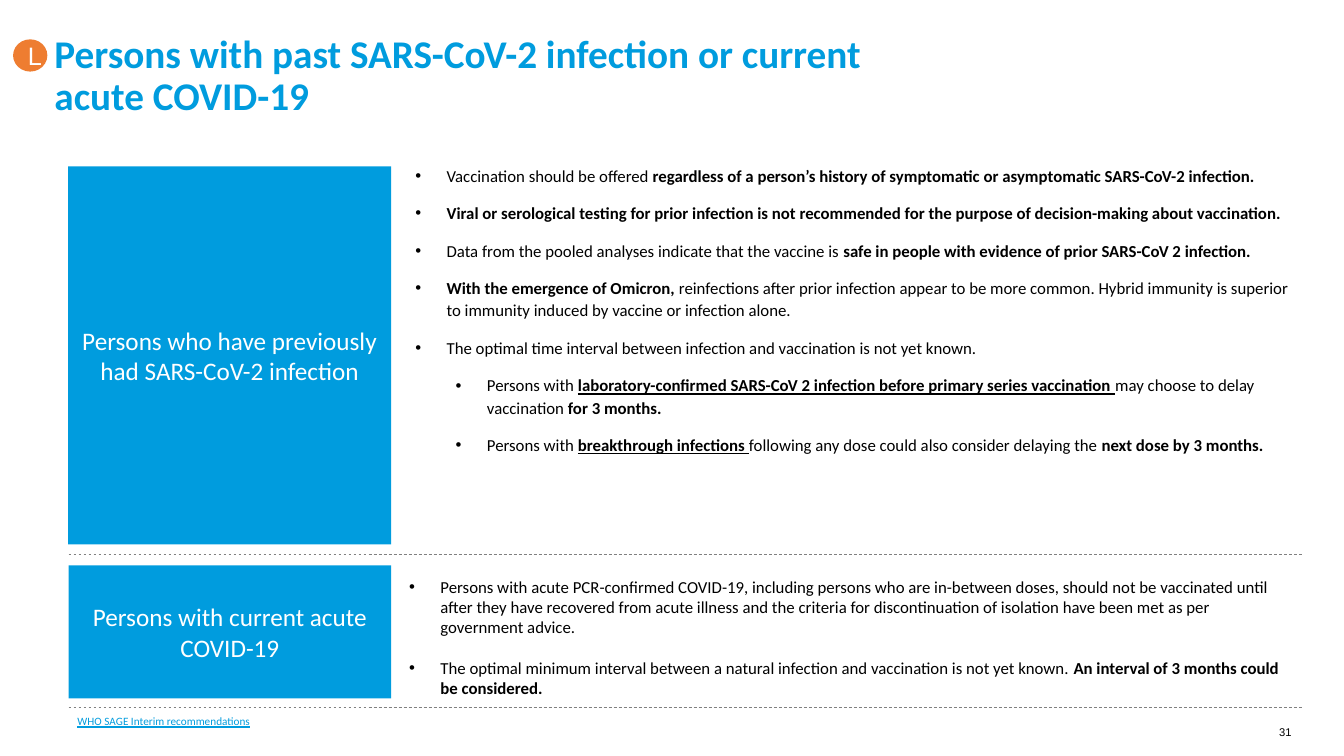
"""Build the slide on vaccinating persons with past or current SARS-CoV-2 infection."""
from dataclasses import dataclass

from lxml import etree
from pptx import Presentation
from pptx import util as u
from pptx.dml.color import RGBColor
from pptx.enum import dml, shapes, text
from pptx.oxml.ns import qn


@dataclass(frozen=True)
class Theme:
    blue: str = "009CDE"
    orange: str = "EE7D31"
    rule: str = "808080"
    ink: str = "000000"
    paper: str = "FFFFFF"
    heading: int = 28
    label: int = 18
    body: int = 12
    small: int = 8
    font: str = "Calibri"
    plain_font: str = "Arial"


theme = Theme()
deck = Presentation()
deck.slide_width, deck.slide_height = u.Inches(13.33), u.Inches(7.5)
COLUMN, ROW = deck.slide_width / 133.3, deck.slide_height / 75
slide = deck.slides.add_slide(deck.slide_layouts[5])


def grid(left, top, width, height):
    return int(left * COLUMN), int(top * ROW), int(width * COLUMN), int(height * ROW)


def write(frame, paragraphs, size, color=theme.ink, font=theme.font, bold=False, underline=False,
          align=text.PP_ALIGN.LEFT, anchor=text.MSO_ANCHOR.TOP, margins=(0.1, 0.05, 0.1, 0.05),
          spacing=1.0, before=0, after=0, bullets=False):
    frame.word_wrap, frame.auto_size = True, text.MSO_AUTO_SIZE.NONE
    frame.vertical_anchor = anchor
    frame.margin_left, frame.margin_top, frame.margin_right, frame.margin_bottom = map(u.Inches, margins)
    for index, (indent, spans) in enumerate(paragraphs):
        paragraph = frame.add_paragraph() if index else frame.paragraphs[0]
        if bullets:
            properties = paragraph._p.get_or_add_pPr()
            properties.set("marL", str(u.Inches(indent)))
            properties.set("indent", str(u.Inches(-0.31)))
            etree.SubElement(properties, qn("a:buFont")).set("typeface", theme.plain_font)
            etree.SubElement(properties, qn("a:buChar")).set("char", "•")
        paragraph.alignment, paragraph.line_spacing = align, spacing
        paragraph.space_before = u.Pt(before if index else 0)
        paragraph.space_after = u.Pt(after)
        for words, style in spans:
            run = paragraph.add_run()
            run.text = words
            run.font.name, run.font.size = font, u.Pt(size)
            run.font.color.rgb = RGBColor.from_string(color)
            run.font.bold = bold or "b" in style
            run.font.underline = underline or "u" in style


past_advice = [
    (0.53, [("Vaccination should be offered ", ""),
            ("regardless of a person’s history of symptomatic or asymptomatic SARS-CoV-2 infection.", "b")]),
    (0.53, [("Viral or serological testing for prior infection is not recommended for the purpose of "
             "decision-making about vaccination.", "b")]),
    (0.53, [("Data from the pooled analyses indicate that the vaccine is ", ""),
            ("safe in people with evidence of prior SARS-CoV 2 infection.", "b")]),
    (0.53, [("With the emergence of Omicron, ", "b"),
            ("reinfections after prior infection appear to be more common. Hybrid immunity is superior "
             "to immunity induced by vaccine or infection alone.", "")]),
    (0.53, [("The optimal time interval between infection and vaccination is not yet known.", "")]),
    (0.93, [("Persons with ", ""),
            ("laboratory-confirmed SARS-CoV 2 infection before primary series vaccination ", "bu"),
            ("may choose to delay vaccination ", ""), ("for 3 months.", "b")]),
    (0.93, [("Persons with ", ""), ("breakthrough infections ", "bu"),
            ("following any dose could also consider delaying the ", ""), ("next dose by 3 months.", "b")]),
]
acute_advice = [
    (0.53, [("Persons with acute PCR-confirmed COVID-19, including persons who are in-between doses, "
             "should not be vaccinated until after they have recovered from acute illness and the criteria "
             "for discontinuation of isolation have been met as per government advice.", "")]),
    (0.53, [("The optimal minimum interval between a natural infection and vaccination is not yet known. ", ""),
            ("An interval of 3 months could be considered.", "b")]),
]

heading = slide.shapes.title
heading.left, heading.top, heading.width, heading.height = grid(5.2, 3.9, 89.2, 7.9)
write(heading.text_frame, [(0, [("Persons with past SARS-CoV-2 infection or current acute COVID-19", "")])],
      theme.heading, color=theme.blue, bold=True, anchor=text.MSO_ANCHOR.BOTTOM,
      margins=(0.02, 0, 0.39, 0), spacing=0.9)

for outline, place, fill, words, font in (
    (shapes.MSO_SHAPE.RECTANGLE, (6.75, 16.5, 32.05, 37.5), theme.blue,
     "Persons who have previously had SARS-CoV-2 infection", theme.font),
    (shapes.MSO_SHAPE.RECTANGLE, (6.8, 56.1, 32, 13.2), theme.blue,
     "Persons with current acute COVID-19", theme.font),
    (shapes.MSO_SHAPE.OVAL, (1.3, 3.9, 3.4, 3.2), theme.orange, "L", theme.plain_font),
):
    panel = slide.shapes.add_shape(outline, *grid(*place))
    panel.shadow.inherit = False
    panel.fill.solid()
    panel.fill.fore_color.rgb = RGBColor.from_string(fill)
    panel.line.fill.background()
    write(panel.text_frame, [(0, [(words, "")])], theme.label, color=theme.paper, font=font,
          align=text.PP_ALIGN.CENTER, anchor=text.MSO_ANCHOR.MIDDLE)

for row in (55, 70.2):
    left, top, width, _ = grid(6.8, row, 122.5, 0)
    divider = slide.shapes.add_connector(shapes.MSO_CONNECTOR.STRAIGHT, left, top, left + width, top)
    divider.line.color.rgb = RGBColor.from_string(theme.rule)
    divider.line.width = u.Pt(0.5)
    divider.line.dash_style = dml.MSO_LINE.DASH
    etree.SubElement(divider._element.spPr, qn("a:effectLst"))

for place, paragraphs, look in (
    ((38.8, 16.2, 90.6, 37.8), past_advice,
     dict(size=theme.body, margins=(0.02, 0, 0.02, 0), spacing=1.1, before=5, after=6, bullets=True)),
    ((37.4, 56.7, 91.9, 13.1), acute_advice, dict(size=theme.body, before=14.6, bullets=True)),
    ((6.7, 70.4, 66.7, 2.4), [(0, [("WHO SAGE Interim recommendations", "")])],
     dict(size=theme.small, color=theme.blue, underline=True)),
    ((124.9, 72, 3.2, 2), [(0, [("31", "")])],
     dict(size=theme.small, font=theme.plain_font, align=text.PP_ALIGN.RIGHT, margins=(0, 0, 0, 0))),
):
    write(slide.shapes.add_textbox(*grid(*place)).text_frame, paragraphs, **look)

deck.save("out.pptx")
